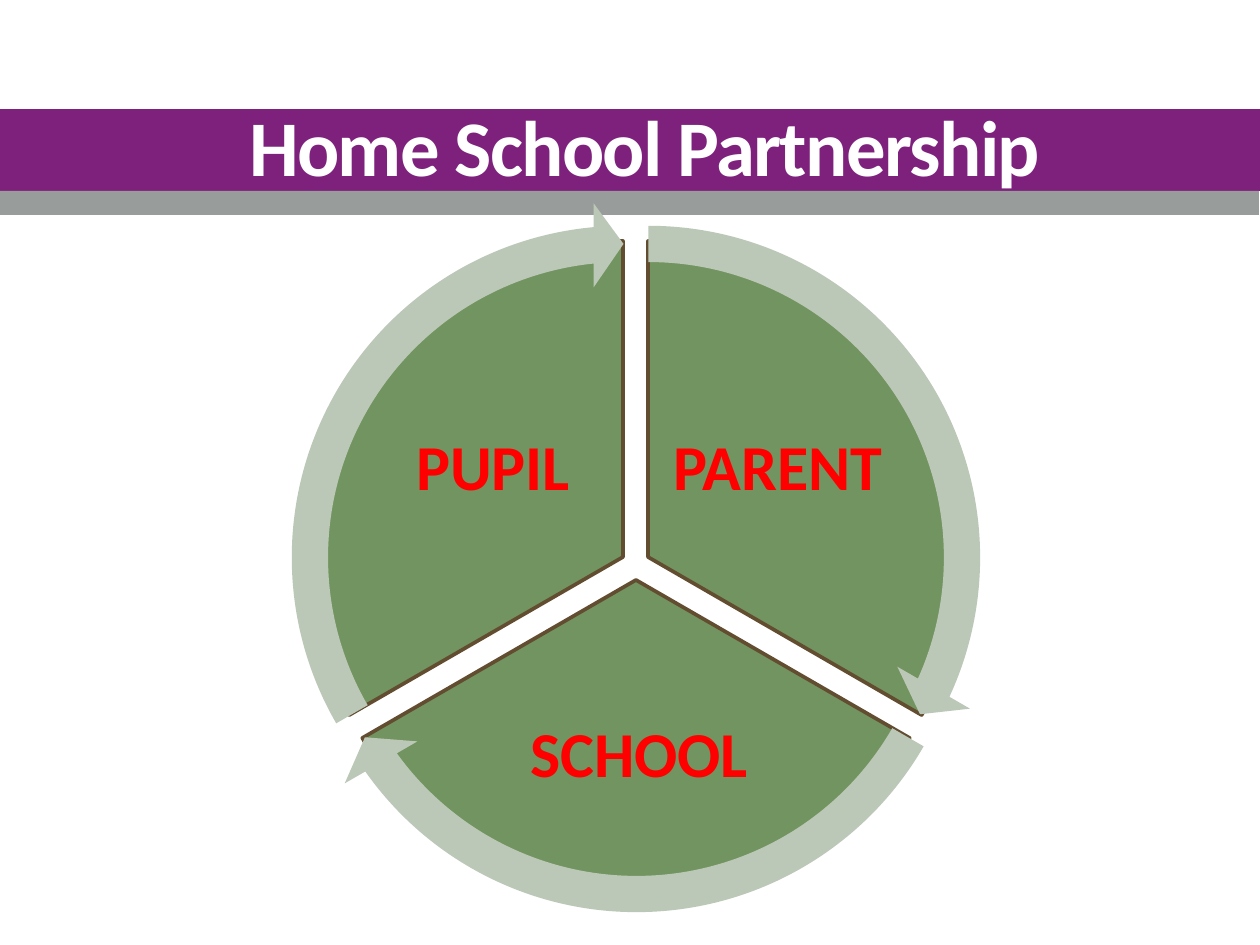
from pptx import Presentation
from pptx import util as u
from pptx.dml.color import RGBColor
from pptx.enum import shapes, text

PX = 10320  # EMU in one px
KIND = shapes.MSO_SHAPE


def paint(fmt, color):
    fmt.solid()
    fmt.fore_color.rgb = RGBColor.from_string(color)


def write(shape, words, size, color, anchor, inset):
    frame = shape.text_frame
    look = {"word_wrap": True, "auto_size": text.MSO_AUTO_SIZE.NONE,
            "vertical_anchor": anchor}
    for side in ("left", "top", "right", "bottom"):
        look["margin_" + side] = inset * PX
    for name, value in look.items():
        setattr(frame, name, value)
    para = frame.paragraphs[0]
    para.alignment = text.PP_ALIGN.CENTER
    para.line_spacing = 0.9
    run = para.add_run()
    run.text = words
    for name, value in {"name": "Calibri", "size": u.Pt(size), "bold": True}.items():
        setattr(run.font, name, value)
    paint(run.font.fill, color)
    return run


deck = Presentation()
deck.slide_width, deck.slide_height = 1260 * PX, 945 * PX
slide = deck.slides.add_slide(deck.slide_layouts[5])
tree = slide.shapes

# Title
title = tree.title
title.left, title.top, title.width, title.height = [n * PX for n in (53, 97, 1183, 97)]
run = write(title, "Home School Partnership", 64, "FFFFFF", text.MSO_ANCHOR.BOTTOM, 0)
run.font._element.set("spc", "-130")

# Bands, the purple one behind the title
bands = []
for top, width, high, color in ((109, 1262, 82, "7E217C"), (191, 1260, 24, "989D9B")):
    band = tree.add_shape(KIND.RECTANGLE, -PX, top * PX, width * PX, high * PX)
    band.shadow.inherit = False
    paint(band.fill, color)
    band.line.fill.background()
    bands.append(band)
title._element.addprevious(bands[0]._element)

# Sectors: left, top, start and end angle, label, label box, arrow angles
PIE, RING, GAP = 632, 711, 39
parts = (
    (332, 241, 162, 18, "PARENT", (665, 376, 226, 188), (14.725, 161.994)),
    (320, 264, 18, 90, "SCHOOL", (470, 674, 338, 166), (86.72, 18.005)),
    (307, 241, 90, 162, "PUPIL", (380, 376, 226, 188), (158.73, 90)),
)
for left, top, start, end, label, box, turn in parts:
    pie = tree.add_shape(KIND.PIE, left * PX, top * PX, PIE * PX, PIE * PX)
    pie.shadow.inherit = False
    pie.adjustments[0], pie.adjustments[1] = start, end
    paint(pie.fill, "729460")
    paint(pie.line.fill, "634D31")
    pie.line.width = u.Pt(3)
    note = tree.add_textbox(*[n * PX for n in box])
    write(note, label, 52, "FF0000", text.MSO_ANCHOR.MIDDLE, 6)

# Arrows around the sectors
for left, top, start, end, label, box, turn in parts:
    ring = tree.add_shape(KIND.CIRCULAR_ARROW, (left - GAP) * PX, (top - GAP) * PX,
                          RING * PX, RING * PX)
    ring.shadow.inherit = False
    for i, value in enumerate((0.051, 3.275, *turn, 0.059)):
        ring.adjustments[i] = value
    paint(ring.fill, "BCC8B7")
    ring.line.fill.background()

deck.save("out.pptx")
